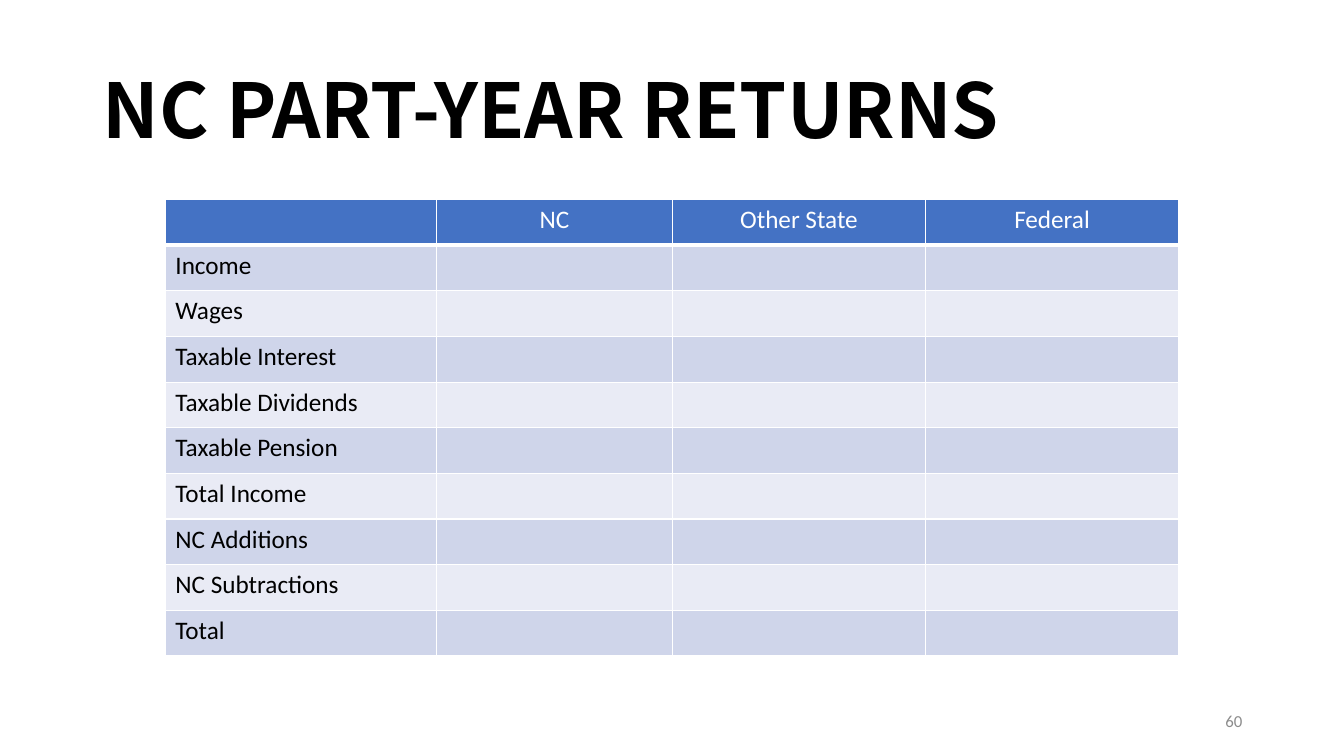
from lxml import etree
from pptx import Presentation
from pptx.dml.color import RGBColor
from pptx.enum import text
from pptx.oxml import ns
from pptx.util import Inches, Pt

COLORS = {
    "black": "000000",
    "white": "FFFFFF",
    "gray": "8C8C8C",
    "head": "4472C4",
    "dark": "CFD5EA",
    "light": "E9EBF5",
}
HEADS = ["", "NC", "Other State", "Federal"]
LABELS = [
    "Income", "Wages", "Taxable Interest", "Taxable Dividends",
    "Taxable Pension", "Total Income", "NC Additions", "NC Subtractions",
    "Total",
]
WIDTHS = [2.69, 2.34, 2.51, 2.51]
HEIGHT = 4.53


def style(para, size, color, face="Calibri", bold=False):
    font = para.font
    font.name, font.size, font.bold = face, Pt(size), bold
    font.color.rgb = RGBColor.from_string(COLORS[color])


def border(cell, side, width):
    """Draw a white line on one side (L, R, T or B) of a cell."""
    props = cell._tc.get_or_add_tcPr()
    line = etree.SubElement(props, ns.qn(f"a:ln{side}"), w=str(Pt(width)))
    fill = etree.SubElement(line, ns.qn("a:solidFill"))
    etree.SubElement(fill, ns.qn("a:srgbClr"), val=COLORS["white"])


prs = Presentation()
prs.slide_width, prs.slide_height = Inches(13.33), Inches(7.5)
slide = prs.slides.add_slide(prs.slide_layouts[6])

# Title and page number
title = slide.shapes.add_textbox(Inches(0.92), Inches(0.41), Inches(11.5), Inches(1.45))
page = slide.shapes.add_textbox(Inches(9.42), Inches(6.95), Inches(3), Inches(0.4))
for box, words in [(title, "NC PART-YEAR RETURNS"), (page, "60")]:
    frame = box.text_frame
    frame.word_wrap = True
    frame.vertical_anchor = text.MSO_ANCHOR.MIDDLE
    frame.text = words

para = title.text_frame.paragraphs[0]
para.line_spacing = 0.9
style(para, 54, "black", "Noto Sans CJK JP", True)
para = page.text_frame.paragraphs[0]
para.alignment = text.PP_ALIGN.RIGHT
style(para, 12, "gray")

# Income table
rows = [HEADS] + [[label, "", "", ""] for label in LABELS]
table = slide.shapes.add_table(
    len(rows), len(HEADS), Inches(1.64), Inches(1.98),
    Inches(sum(WIDTHS)), Inches(HEIGHT),
).table
for col, width in zip(table.columns, WIDTHS):
    col.width = Inches(width)

for r, row in enumerate(rows):
    table.rows[r].height = Inches(HEIGHT / len(rows))
    is_head = r == 0
    shade = "head" if is_head else "dark" if r % 2 else "light"
    for c, words in enumerate(row):
        cell = table.cell(r, c)
        for side in "LRTB":
            border(cell, side, 3 if is_head and side == "B" else 1)
        cell.fill.solid()
        cell.fill.fore_color.rgb = RGBColor.from_string(COLORS[shade])
        cell.text = words
        para = cell.text_frame.paragraphs[0]
        style(para, 18, "white" if is_head else "black")
        if is_head:
            para.alignment = text.PP_ALIGN.CENTER

prs.save("out.pptx")
